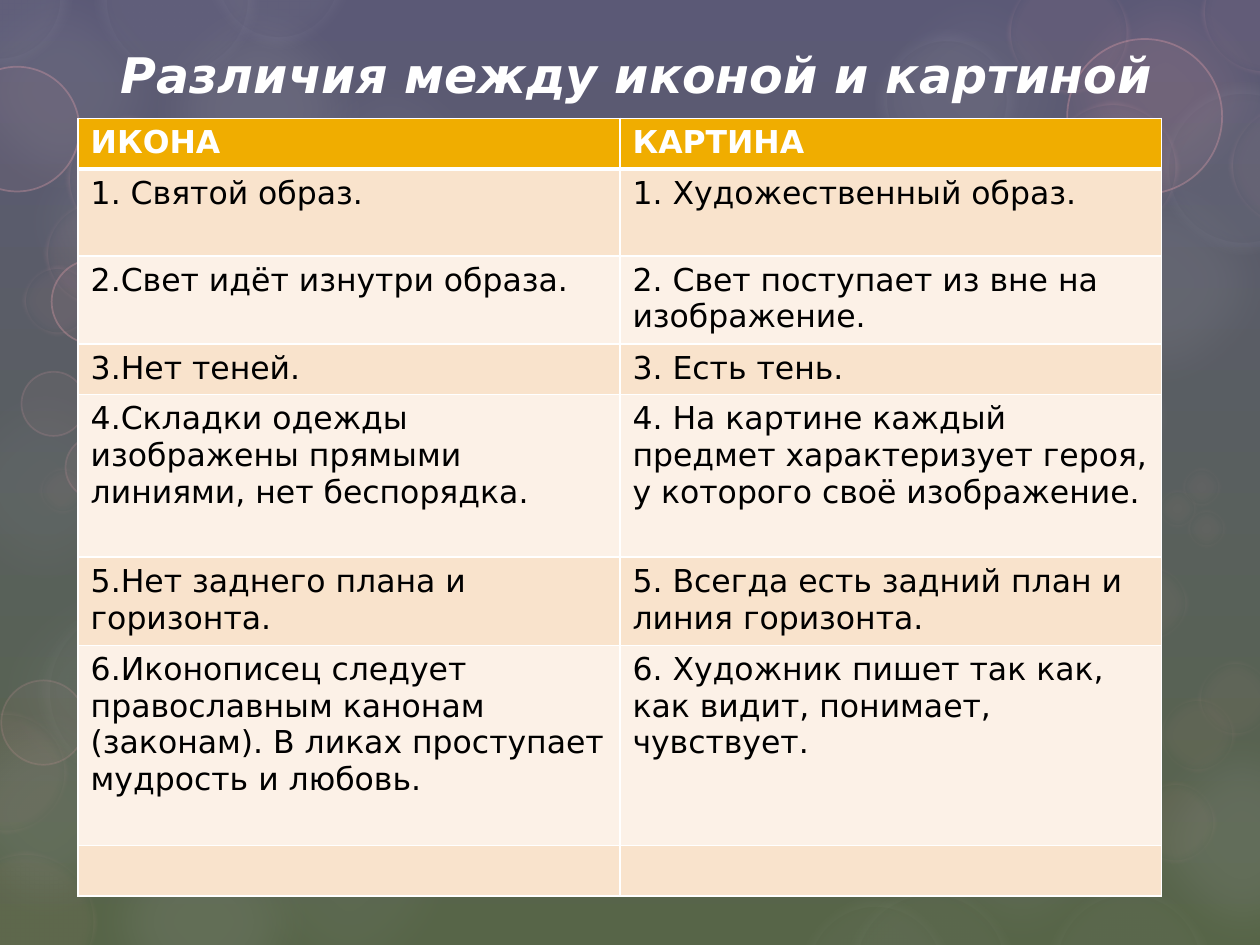
"""Builds a slide that compares an icon with a painting in a two-column table."""
from lxml.etree import SubElement
from pptx import Presentation
from pptx.dml.color import RGBColor
from pptx.enum.shapes import MSO_SHAPE
from pptx.enum.text import MSO_ANCHOR, PP_ALIGN
from pptx.oxml.ns import qn
from pptx.util import Pt

PX = 9144
FONT = "DejaVu Sans"
GREY, PINK, PALE, WHITE = "9D9DA2", "F0A7B1", "E5E5E6", "FFFFFF"


def paint(fill, color, alpha=100):
    fill.solid()
    fill.fore_color.rgb = RGBColor.from_string(color)
    if alpha < 100:
        node = fill._xPr.find(qn("a:solidFill"))[0]
        SubElement(node, qn("a:alpha"), val=str(alpha * 1000))


def write(frame, text, size, color, bold=False, italic=False):
    run = frame.paragraphs[0].add_run()
    run.text = text
    font = run.font
    font.name, font.size, font.bold, font.italic = FONT, Pt(size), bold, italic
    paint(font.fill, color)


deck = Presentation()
deck.slide_width, deck.slide_height = 1000 * PX, 750 * PX
slide = deck.slides.add_slide(deck.slide_layouts[6])

back = slide.background.fill
back.gradient()
back.gradient_angle = 270
for stop, color in zip(back.gradient_stops, ("5B5976", "576548")):
    stop.color.rgb = RGBColor.from_string(color)

# fill, fill alpha, line, line width, line alpha, soft edge, (left, top, size)
groups = [
    (GREY, 5, None, 0, 0, 25, [(729, 477, 209)]),
    (GREY, 8, None, 0, 0, 25, [
        (-26, 442, 209), (77, 524, 209), (173, 596, 209), (-69, 282, 209)]),
    (GREY, 10, None, 0, 0, 25, [
        (57, 120, 209), (205, 31, 209), (669, -29, 209), (706, 562, 209),
        (675, 262, 133)]),
    (GREY, 15, None, 0, 0, 25, [
        (0, 72, 209), (820, 120, 209), (669, 86, 209), (-56, -32, 209)]),
    (GREY, 16, None, 0, 0, 25, [
        (57, 627, 209), (881, 562, 209), (-68, 541, 209)]),
    (GREY, 20, None, 0, 0, 25, [(101, -18, 209)]),
    (PINK, 10, None, 0, 0, 25, [(820, -32, 209)]),
    (GREY, 10, PALE, 14, 6, 10, [
        (918, 65, 137), (694, 23, 114), (752, 159, 133), (789, 224, 114),
        (847, 291, 79), (75, -65, 131), (164, -75, 114), (-57, -58, 114)]),
    (GREY, 6, PALE, 14, 4, 10, [
        (30, 473, 153), (632, 710, 125), (670, 701, 137), (829, 701, 133)]),
    (PINK, 5, PINK, 1, 15, 0, [
        (1, 540, 67), (834, 614, 81), (820, 539, 81), (17, 295, 51),
        (52, 346, 50)]),
    (PINK, 5, PINK, 5, 15, 5, [
        (-36, 675, 113), (-44, 564, 98), (763, 573, 81), (900, 620, 66),
        (883, 448, 61), (920, 553, 61), (950, 524, 61), (937, 370, 33),
        (918, 387, 33), (941, 403, 33), (30, 370, 39)]),
    (PINK, 5, PINK, 1, 30, 0, [
        (-36, 53, 99), (41, 206, 67), (847, 31, 123), (817, 145, 67)]),
    (PINK, 5, PINK, 5, 30, 5, [
        (52, 92, 100), (35, 159, 85), (17, 210, 57), (799, -23, 98),
        (953, -40, 100), (975, 82, 99), (830, 80, 106)]),
]
for fill, alpha, edge, width, clear, soft, discs in groups:
    for left, top, size in discs:
        disc = slide.shapes.add_shape(
            MSO_SHAPE.OVAL, left * PX, top * PX, size * PX, size * PX)
        disc.shadow.inherit = False
        paint(disc.fill, fill, alpha)
        if edge:
            paint(disc.line.fill, edge, clear)
            disc.line.width = Pt(width)
        else:
            disc.line.fill.background()
        if soft:
            glow = disc._element.spPr.find(qn("a:effectLst"))
            SubElement(glow, qn("a:softEdge"), rad=str(Pt(soft)))

title = slide.shapes.add_textbox(86 * PX, 0, 883 * PX, 117 * PX).text_frame
title.word_wrap = True
title.vertical_anchor = MSO_ANCHOR.MIDDLE
title.paragraphs[0].alignment = PP_ALIGN.LEFT
write(title, "Различия между иконой и картиной", 28, WHITE, True, True)

rows = [
    (40, "ИКОНА", "КАРТИНА"),
    (69, "1. Святой образ.", "1. Художественный образ."),
    (69, "2.Свет идёт изнутри образа.",
     "2. Свет поступает из вне на изображение."),
    (40, "3.Нет теней.", "3. Есть тень."),
    (129, "4.Складки одежды изображены прямыми линиями, нет беспорядка.",
     "4. На картине каждый предмет характеризует героя, "
     "у которого своё изображение."),
    (69, "5.Нет заднего плана и горизонта.",
     "5. Всегда есть задний план и линия горизонта."),
    (159, "6.Иконописец следует православным канонам (законам). "
     "В ликах проступает мудрость и любовь.",
     "6. Художник пишет так как, как видит, понимает, чувствует."),
    (40, "", ""),
]
table = slide.shapes.add_table(
    len(rows), 2, 62 * PX, 94 * PX, 860 * PX, 615 * PX).table
for y, (height, *texts) in enumerate(rows):
    table.rows[y].height = height * PX
    head = y == 0
    shade = "F0AD00" if head else ("FCF1E7", "F9E3CC")[y % 2]
    for x, text in enumerate(texts):
        cell = table.cell(y, x)
        props = cell._tc.get_or_add_tcPr()
        for side in "LRTB":
            thick = 3 if (y, side) in ((0, "B"), (1, "T")) else 1
            line = SubElement(props, qn(f"a:ln{side}"), w=str(Pt(thick)))
            solid = SubElement(line, qn("a:solidFill"))
            SubElement(solid, qn("a:srgbClr"), val=WHITE)
        paint(cell.fill, shade)
        if text:
            write(cell.text_frame, text, 18, WHITE if head else "000000", head)

deck.save("out.pptx")
